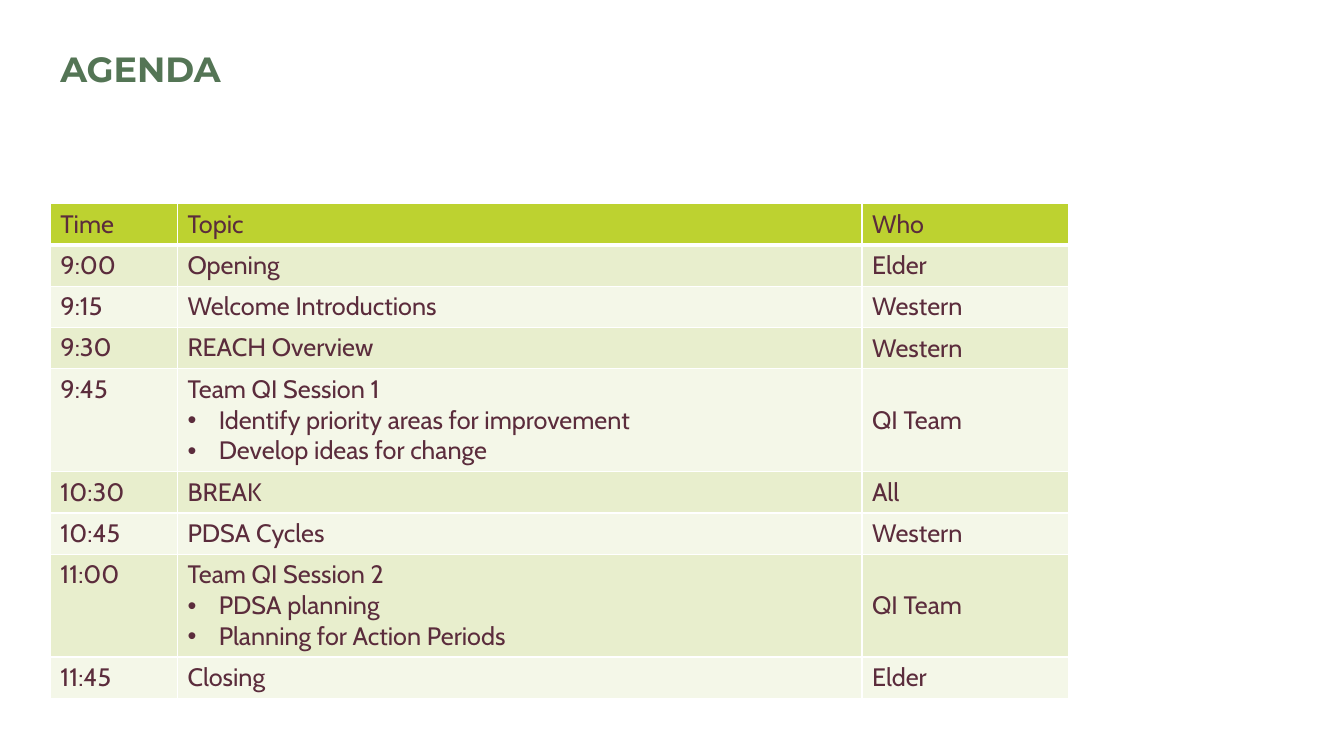
"""Build the agenda slide: a title above a three-column timetable."""
from lxml import etree
from pptx import Presentation
from pptx.dml.color import RGBColor
from pptx.enum.text import MSO_ANCHOR
from pptx.oxml.ns import qn
from pptx.util import Inches, Pt

TOP, MID = MSO_ANCHOR.TOP, MSO_ANCHOR.MIDDLE
HUES = {"title": "547555", "text": "5B2C3C", "head": "BDD230",
        "odd": "E8EECD", "even": "F4F7E8", "line": "FFFFFF"}
LEFT, ROW, STEP = 0.5, 0.41, 0.305
COLS = [1.26, 6.79, 2.05]
ROWS = [
    ("Time", ["Topic"], "Who", TOP),
    ("9:00", ["Opening"], "Elder", TOP),
    ("9:15", ["Welcome Introductions"], "Western", TOP),
    ("9:30", ["REACH Overview"], "Western", MID),
    ("9:45", ["Team QI Session 1", "Identify priority areas for improvement",
              "Develop ideas for change"], "QI Team", MID),
    ("10:30", ["BREAK"], "All", MID),
    ("10:45", ["PDSA Cycles"], "Western", MID),
    ("11:00", ["Team QI Session 2", "PDSA planning",
               "Planning for Action Periods"], "QI Team", MID),
    ("11:45", ["Closing"], "Elder", TOP),
]


def style(para, hue, form):
    for name, value in form.items():
        setattr(para.font, name, value)
    para.font.color.rgb = RGBColor.from_string(HUES[hue])


def edge(cell, side, width):
    line = etree.SubElement(cell._tc.get_or_add_tcPr(), qn(f"a:ln{side}"), w=str(Pt(width)))
    fill = etree.SubElement(line, qn("a:solidFill"))
    etree.SubElement(fill, qn("a:srgbClr"), val=HUES["line"])


deck = Presentation()
deck.slide_width, deck.slide_height = Inches(13.33), Inches(7.5)
slide = deck.slides.add_slide(deck.slide_layouts[6])

grid = slide.shapes.add_table(len(ROWS), len(COLS), Inches(LEFT), Inches(2.02),
                              Inches(sum(COLS)), Inches(ROW * len(ROWS))).table
grid.horz_banding = False
for col, width in zip(grid.columns, COLS):
    col.width = Inches(width)

body = {"name": "Cabin", "size": Pt(18), "bold": False}
for r, (time, topic, who, anchor) in enumerate(ROWS):
    grid.rows[r].height = Inches(ROW + STEP * (len(topic) - 1))
    shade = "head" if r == 0 else "odd" if r % 2 else "even"
    for c, lines in enumerate([[time], topic, [who]]):
        cell = grid.cell(r, c)
        for side in "LRTB":
            thick = (r, side) in [(0, "B"), (1, "T")]
            edge(cell, side, 3 if thick else 1)
        cell.fill.solid()
        cell.fill.fore_color.rgb = RGBColor.from_string(HUES[shade])
        cell.vertical_anchor = anchor if c == 2 else TOP
        cell.text = "\n".join(lines)
        for n, para in enumerate(cell.text_frame.paragraphs):
            if n:
                props = para._p.get_or_add_pPr()
                props.set("marL", str(Inches(0.31)))
                props.set("indent", str(-Inches(0.31)))
                etree.SubElement(props, qn("a:buFont"), typeface="Arial")
                etree.SubElement(props, qn("a:buChar"), char="•")
            style(para, "text", body)

title = slide.shapes.add_textbox(Inches(LEFT), Inches(0.42), Inches(9.92), Inches(0.5)).text_frame
title.word_wrap = True
title.text = "AGENDA"
style(title.paragraphs[0], "title", {"name": "Montserrat", "size": Pt(25), "bold": True})

deck.save("out.pptx")
